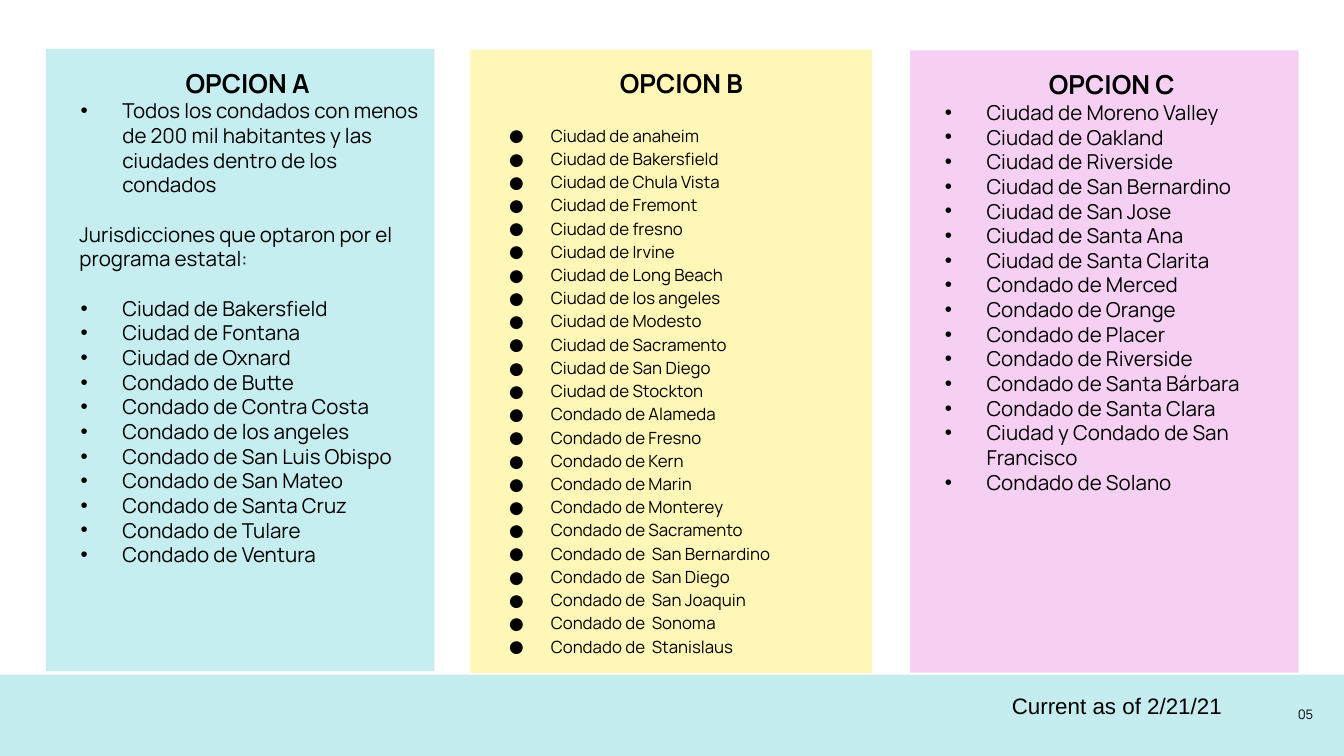
from dataclasses import dataclass

from lxml import etree
from pptx import Presentation
from pptx.dml.color import RGBColor
from pptx.enum.shapes import MSO_SHAPE
from pptx.enum.text import MSO_ANCHOR, PP_ALIGN
from pptx.oxml.ns import qn
from pptx.util import Emu, Inches, Pt

RECTANGLE = MSO_SHAPE.RECTANGLE
TOP, MIDDLE = MSO_ANCHOR.TOP, MSO_ANCHOR.MIDDLE
LEFT, CENTER, RIGHT = PP_ALIGN.LEFT, PP_ALIGN.CENTER, PP_ALIGN.RIGHT


@dataclass(frozen=True)
class Theme:
    ink: str = "000000"
    band: str = "C5ECEF"
    aqua: str = "C6EDEF"
    yellow: str = "FFF391"
    pink: str = "F0B7EE"
    font: str = "Manrope"
    note_font: str = "Arial"
    title_size: float = 14
    list_size: float = 11
    dense_size: float = 9
    note_size: float = 12
    number_size: float = 7
    loose: float = 1.15


@dataclass(frozen=True)
class Area:
    """Place on a grid of 100 columns; every cell is a square."""
    column: float
    row: float
    columns: float
    rows: float


@dataclass(frozen=True)
class ListStyle:
    size: float
    bullet: str
    bullet_font: str
    margin: float
    spacing: float


@dataclass(frozen=True)
class Line:
    text: str
    bulleted: bool = True
    gap: float = 0


@dataclass(frozen=True)
class Panel:
    area: Area
    fill: str
    opacity: int
    title: str
    style: ListStyle
    lines: list[Line]


THEME = Theme()
WIDTH = Inches(10)
HEIGHT = Emu(WIDTH * 9 // 16)
CELL = WIDTH / 100
TEXT_MARGIN, HANGING = 0.15, -0.31
PLAIN_LIST = ListStyle(THEME.list_size, "•", THEME.note_font, 0.47, 1.0)
DENSE_LIST = ListStyle(THEME.dense_size, "●", THEME.font, 0.5, THEME.loose)
PLAIN_GAP, DENSE_GAP = 13.2, 12.4


def places(kind: str, names: list[str], gap: float = 0) -> list[Line]:
    """One bulleted line per place, with a gap above the first."""
    return [Line(f"{kind} de {name}", gap=0 if index else gap)
            for index, name in enumerate(names)]


PANELS = [
    Panel(Area(3.42, 3.65, 28.9, 46.3), THEME.aqua, 100, "OPCION A ", PLAIN_LIST, [
        Line("Todos los condados con menos de 200 mil habitantes "
             "y las ciudades dentro de los condados"),
        Line("Jurisdicciones que optaron por el programa estatal:", False, PLAIN_GAP),
        *places("Ciudad", ["Bakersfield", "Fontana", "Oxnard"], PLAIN_GAP),
        *places("Condado", ["Butte", "Contra Costa", "los angeles", "San Luis Obispo",
                            "San Mateo", "Santa Cruz", "Tulare", "Ventura"]),
    ]),
    Panel(Area(35, 3.7, 29.9, 46.4), THEME.yellow, 65, "OPCION B", DENSE_LIST, [
        *places("Ciudad", ["anaheim", "Bakersfield", "Chula Vista", "Fremont", "fresno",
                           "Irvine", "Long Beach", "los angeles", "Modesto",
                           "Sacramento", "San Diego", "Stockton"], DENSE_GAP),
        *places("Condado", ["Alameda", "Fresno", "Kern", "Marin", "Monterey",
                            "Sacramento"]),
        *places("Condado", [" San Bernardino", " San Diego", " San Joaquin",
                            " Sonoma", " Stanislaus"]),
    ]),
    Panel(Area(67.72, 3.75, 28.9, 46.3), THEME.pink, 65, "OPCION C ", PLAIN_LIST, [
        *places("Ciudad", ["Moreno Valley", "Oakland", "Riverside", "San Bernardino",
                           "San Jose", "Santa Ana", "Santa Clarita"]),
        *places("Condado", ["Merced", "Orange", "Placer", "Riverside",
                            "Santa Bárbara", "Santa Clara"]),
        Line("Ciudad y Condado de San Francisco"),
        Line("Condado de Solano"),
    ]),
]


def bounds(area: Area) -> list[Emu]:
    return [Emu(round(cells * CELL))
            for cells in (area.column, area.row, area.columns, area.rows)]


def prepare_frame(shape, anchor=TOP, vertical_inset: float = 0.1):
    frame = shape.text_frame
    frame.word_wrap = True
    frame.vertical_anchor = anchor
    frame.margin_left = frame.margin_right = Inches(0.1)
    frame.margin_top = frame.margin_bottom = Inches(vertical_inset)
    return frame


def add_rectangle(page, area: Area, color: str, opacity: int = 100):
    shape = page.shapes.add_shape(RECTANGLE, *bounds(area))
    shape.shadow.inherit = False
    shape.line.fill.background()
    shape.fill.solid()
    shape.fill.fore_color.rgb = RGBColor.from_string(color)
    if opacity < 100:
        color_node = shape.element.spPr.find(qn("a:solidFill"))[0]
        etree.SubElement(color_node, qn("a:alpha"), val=str(opacity * 1000))
    return shape


def add_span(para, text: str, size: float, font: str = THEME.font,
             bold: bool = False) -> None:
    span = para.add_run()
    span.text = text
    span.font.name = font
    span.font.size = Pt(size)
    span.font.bold = bold
    span.font.color.rgb = RGBColor.from_string(THEME.ink)


def set_indent(para, margin: float, first: float = 0) -> None:
    properties = para._p.get_or_add_pPr()
    properties.set("marL", str(Inches(margin)))
    properties.set("indent", str(Inches(first)))


def add_bullet(para, style: ListStyle) -> None:
    properties = para._p.get_or_add_pPr()
    bullet_color = etree.SubElement(properties, qn("a:buClr"))
    etree.SubElement(bullet_color, qn("a:srgbClr"), val=THEME.ink)
    etree.SubElement(properties, qn("a:buFont"), typeface=style.bullet_font)
    etree.SubElement(properties, qn("a:buChar"), char=style.bullet)


def draw_panel(page, panel: Panel) -> None:
    frame = prepare_frame(add_rectangle(page, panel.area, panel.fill, panel.opacity))
    heading = frame.paragraphs[0]
    heading.alignment = CENTER
    heading.line_spacing = THEME.loose
    set_indent(heading, TEXT_MARGIN)
    add_span(heading, panel.title, THEME.title_size, bold=True)
    for line in panel.lines:
        para = frame.add_paragraph()
        para.alignment = LEFT
        para.line_spacing = panel.style.spacing
        para.space_before = Pt(line.gap)
        if line.bulleted:
            set_indent(para, panel.style.margin, HANGING)
            add_bullet(para, panel.style)
        else:
            set_indent(para, TEXT_MARGIN)
        add_span(para, line.text, panel.style.size)


def draw_label(page, area: Area, text: str, size: float, font: str,
               alignment=LEFT, anchor=TOP, vertical_inset: float = 0.05) -> None:
    box = page.shapes.add_textbox(*bounds(area))
    para = prepare_frame(box, anchor, vertical_inset).paragraphs[0]
    para.alignment = alignment
    add_span(para, text, size, font)


def main() -> None:
    deck = Presentation()
    deck.slide_width, deck.slide_height = WIDTH, HEIGHT
    page = deck.slides.add_slide(deck.slide_layouts[6])

    # Footer band and page number
    add_rectangle(page, Area(0, 50.2, 100, 6.05), THEME.band)
    draw_label(page, Area(92.7, 51, 6, 4.3), "05", THEME.number_size,
               THEME.font, RIGHT, MIDDLE, 0.1)

    # Three option panels
    for panel in PANELS:
        draw_panel(page, panel)

    # Date note
    draw_label(page, Area(74.3, 51, 18.4, 3), "Current as of 2/21/21",
               THEME.note_size, THEME.note_font)

    deck.save("out.pptx")


if __name__ == "__main__":
    main()
